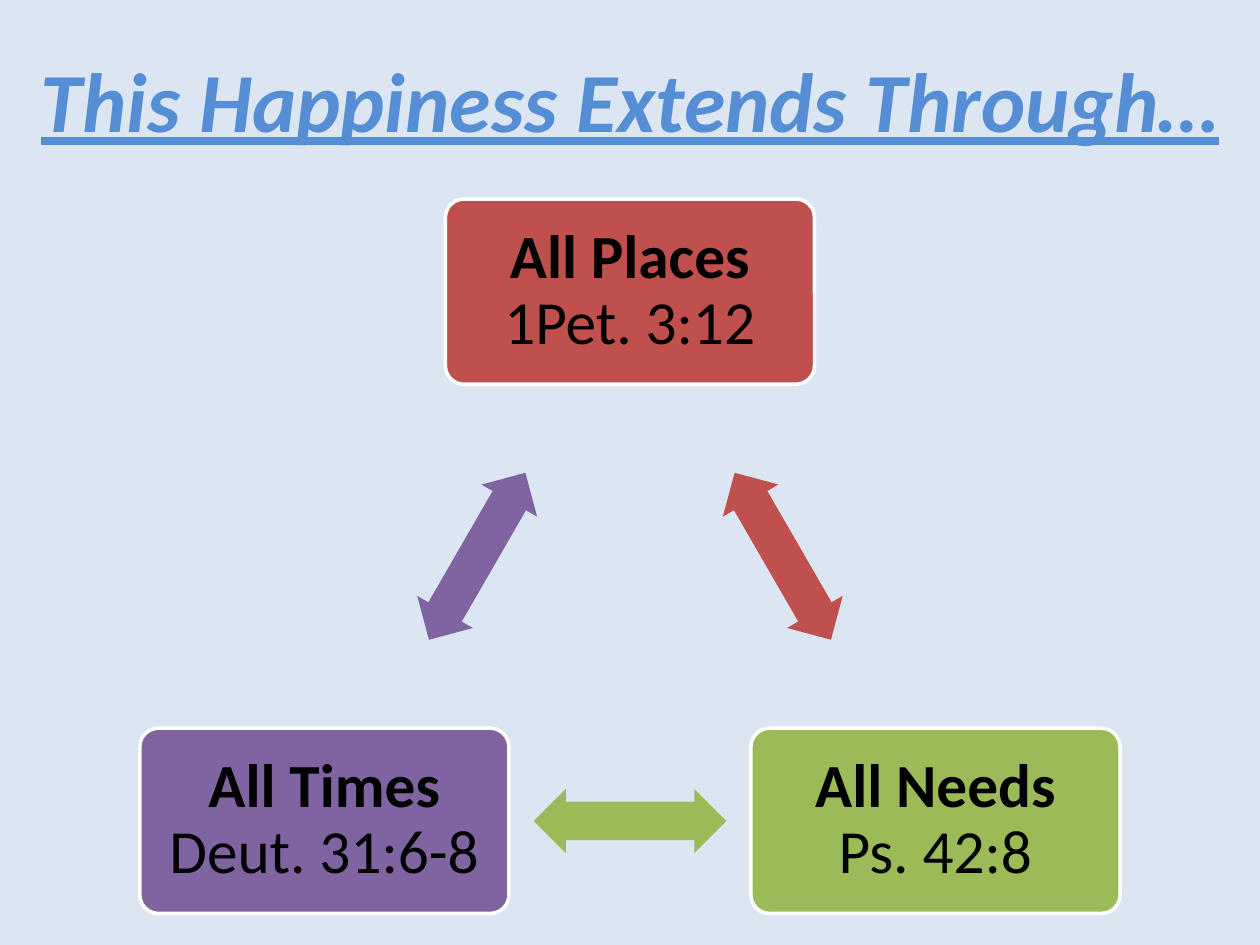
"""Build a slide with three linked boxes in a triangular cycle."""
from dataclasses import dataclass

from pptx import Presentation
from pptx.dml.color import RGBColor
from pptx.enum.shapes import MSO_SHAPE as Shape
from pptx.enum.text import MSO_ANCHOR as Anchor, MSO_AUTO_SIZE as AutoSize, PP_ALIGN as Align
from pptx.util import Inches, Pt


@dataclass(frozen=True)
class Theme:
    """Colours, font and type sizes of the slide."""
    font: str = "Calibri"
    background: str = "DCE6F2"
    title: str = "558ED5"
    text: str = "000000"
    outline: str = "FFFFFF"
    red: str = "C0504D"
    green: str = "9BBB59"
    purple: str = "8064A2"
    title_size: int = 48
    box_size: int = 35


THEME = Theme()
BOX_SIZE = (2.93, 1.47)
ARROW_SIZE = (1.53, 0.51)
CYCLE = [
    ("All Places ", "1Pet. 3:12", THEME.red, (5, 2.315)),
    ("All Needs ", "Ps. 42:8", THEME.green, (7.425, 6.515)),
    ("All Times ", "Deut. 31:6-8", THEME.purple, (2.575, 6.515)),
]


def style_run(run, size, color, bold=False):
    """Set the font, size, colour and weight of a run."""
    run.font.name = THEME.font
    run.font.size = Pt(size)
    run.font.color.rgb = RGBColor.from_string(color)
    run.font.bold = bold


def add_centred_shape(slide, kind, center, size, color):
    """Add a filled shape without outline around a centre point."""
    (x, y), (width, height) = center, size
    shape = slide.shapes.add_shape(kind, Inches(x - width / 2), Inches(y - height / 2),
                                   Inches(width), Inches(height))
    shape.shadow.inherit = False
    shape.fill.solid()
    shape.fill.fore_color.rgb = RGBColor.from_string(color)
    shape.line.fill.background()
    return shape


def add_box(slide, heading, verse, color, center):
    """Add a rounded box with a bold heading and a verse."""
    box = add_centred_shape(slide, Shape.ROUNDED_RECTANGLE, center, BOX_SIZE, color)
    box.adjustments[0] = 0.1
    box.line.color.rgb = RGBColor.from_string(THEME.outline)
    box.line.width = Pt(2)
    frame = box.text_frame
    frame.word_wrap = True
    frame.vertical_anchor = Anchor.MIDDLE
    frame.margin_left = frame.margin_right = Inches(0.15)
    frame.margin_top = frame.margin_bottom = Inches(0.15)
    paragraph = frame.paragraphs[0]
    paragraph.alignment = Align.CENTER
    paragraph.line_spacing = 0.9
    for text, bold in ((heading, True), (verse, False)):
        run = paragraph.add_run()
        run.text = text
        style_run(run, THEME.box_size, THEME.text, bold)


def add_arrow(slide, start, end, color, rotation):
    """Add a double arrow halfway between two box centres."""
    middle = tuple((a + b) / 2 for a, b in zip(start, end))
    arrow = add_centred_shape(slide, Shape.LEFT_RIGHT_ARROW, middle, ARROW_SIZE, color)
    arrow.adjustments[0] = 0.6
    arrow.adjustments[1] = 0.5
    arrow.rotation = rotation


def add_title(slide, text):
    """Fill and format the title placeholder."""
    title = slide.shapes.title
    title.left, title.top = Inches(0), Inches(0.33)
    title.width, title.height = Inches(10), Inches(0.91)
    frame = title.text_frame
    frame.text = text
    frame.auto_size = AutoSize.NONE
    paragraph = frame.paragraphs[0]
    paragraph.alignment = Align.CENTER
    run = paragraph.runs[0]
    style_run(run, THEME.title_size, THEME.title, bold=True)
    run.font.italic = True
    run.font.underline = True


def main():
    """Build and save the presentation."""
    presentation = Presentation()
    presentation.slide_width, presentation.slide_height = Inches(10), Inches(7.5)
    slide = presentation.slides.add_slide(presentation.slide_layouts[5])
    slide.background.fill.solid()
    slide.background.fill.fore_color.rgb = RGBColor.from_string(THEME.background)
    add_title(slide, "This Happiness Extends Through…")
    for index, (heading, verse, color, center) in enumerate(CYCLE):
        following = CYCLE[(index + 1) % len(CYCLE)][3]
        add_box(slide, heading, verse, color, center)
        add_arrow(slide, center, following, color, 60 + 120 * index)
    presentation.save("out.pptx")


if __name__ == "__main__":
    main()
